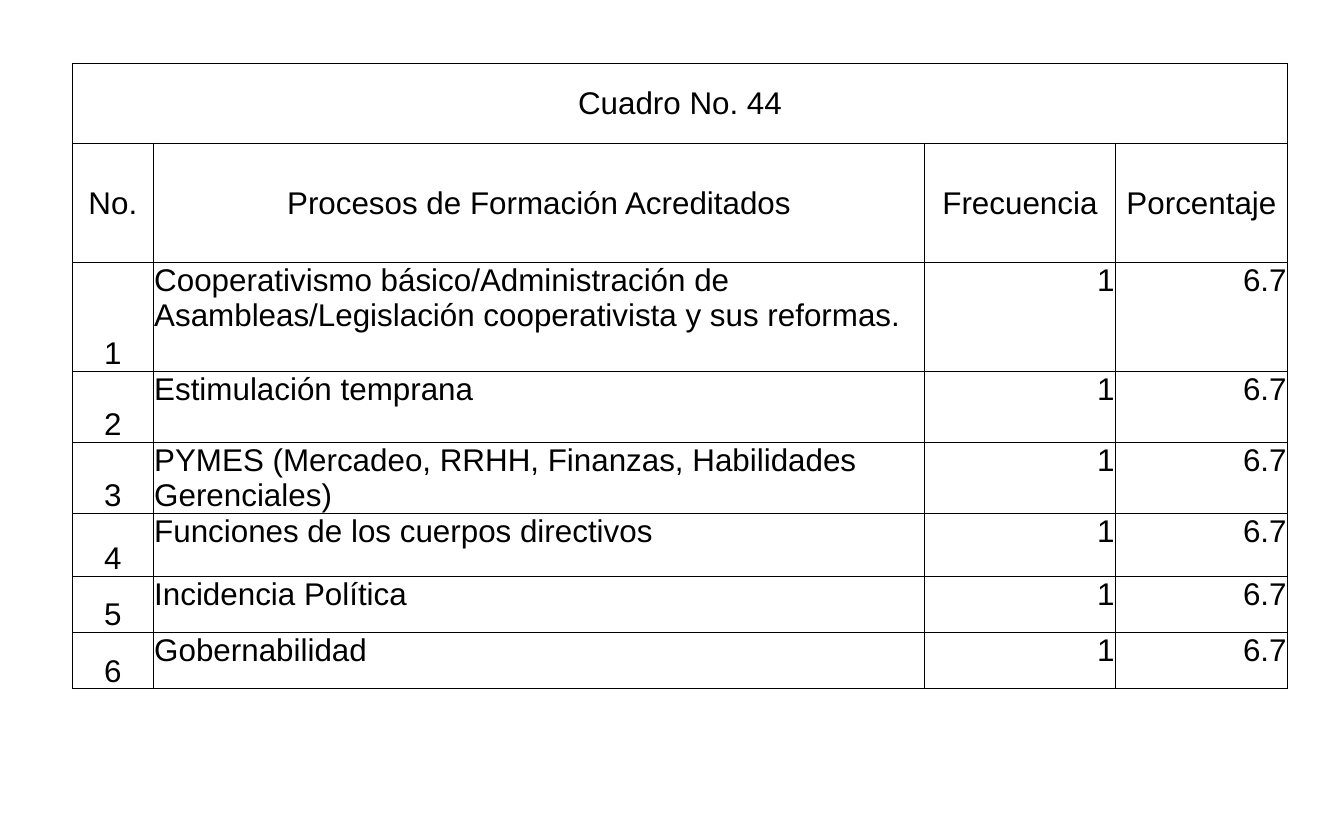
import dataclasses
import lxml.etree
import pptx
import pptx.dml.color
import pptx.enum.text
import pptx.oxml.ns
import pptx.util

Inches = pptx.util.Inches
Pt = pptx.util.Pt
Align = pptx.enum.text.PP_ALIGN
Anchor = pptx.enum.text.MSO_ANCHOR
qn = pptx.oxml.ns.qn

FONT = "Arial"
BLACK = "000000"


@dataclasses.dataclass(frozen=True)
class Look:
    align: Align
    anchor: Anchor


HEAD = Look(Align.CENTER, Anchor.MIDDLE)
INDEX = Look(Align.CENTER, Anchor.BOTTOM)
NAME = Look(Align.LEFT, Anchor.TOP)
VALUE = Look(Align.RIGHT, Anchor.TOP)

COLS = [0.86, 8.2, 2.03, 1.83]
ROWS = [0.85, 1.27, 1.16, 0.75, 0.64, 0.67, 0.6, 0.6]
LABELS = ["No.", "Procesos de Formación Acreditados", "Frecuencia", "Porcentaje"]
TOPICS = [
    "Cooperativismo básico/Administración de Asambleas/Legislación cooperativista y sus reformas.",
    "Estimulación temprana",
    "PYMES (Mercadeo, RRHH, Finanzas, Habilidades Gerenciales)",
    "Funciones de los cuerpos directivos",
    "Incidencia Política",
    "Gobernabilidad",
]


def color(code: str) -> pptx.dml.color.RGBColor:
    return pptx.dml.color.RGBColor.from_string(code)


def border(cell, code: str, width: float) -> None:
    props = cell._tc.get_or_add_tcPr()
    for spot, side in enumerate(("lnL", "lnR", "lnT", "lnB")):
        line = lxml.etree.Element(qn(f"a:{side}"), w=str(Pt(width)))
        fill = lxml.etree.SubElement(line, qn("a:solidFill"))
        lxml.etree.SubElement(fill, qn("a:srgbClr"), val=code)
        props.insert(spot, line)


def write(cell, text: str, look: Look) -> None:
    cell.margin_left = cell.margin_right = cell.margin_top = Inches(0.01)
    cell.margin_bottom = 0
    cell.vertical_anchor = look.anchor
    cell.text_frame.text = text
    para = cell.text_frame.paragraphs[0]
    para.alignment = look.align
    para.font.size = Pt(24)
    for run in para.runs:
        run.font.name = FONT
        run.font.size = Pt(24)
        run.font.color.rgb = color(BLACK)


def main() -> None:
    deck = pptx.Presentation()
    deck.slide_width, deck.slide_height = Inches(14.29), Inches(8.9)
    slide = deck.slides.add_slide(deck.slide_layouts[6])

    # Table grid
    frame = slide.shapes.add_table(
        len(ROWS), len(COLS), Inches(0.77), Inches(0.67),
        Inches(sum(COLS)), Inches(sum(ROWS)))
    table = frame.table
    table.first_row = table.horz_banding = False
    for col, width in zip(table.columns, COLS):
        col.width = Inches(width)
    for row, height in zip(table.rows, ROWS):
        row.height = Inches(height)
    for cell in table.iter_cells():
        cell.fill.background()
        border(cell, BLACK, 0.5)

    # Title and column heads
    table.cell(0, 0).merge(table.cell(0, len(COLS) - 1))
    write(table.cell(0, 0), "Cuadro No. 44", HEAD)
    for col, label in enumerate(LABELS):
        write(table.cell(1, col), label, HEAD)

    # Training topics
    looks = [INDEX, NAME, VALUE, VALUE]
    for num, topic in enumerate(TOPICS, 1):
        for col, text in enumerate([str(num), topic, "1", "6.7"]):
            write(table.cell(num + 1, col), text, looks[col])

    deck.save("out.pptx")


if __name__ == "__main__":
    main()
